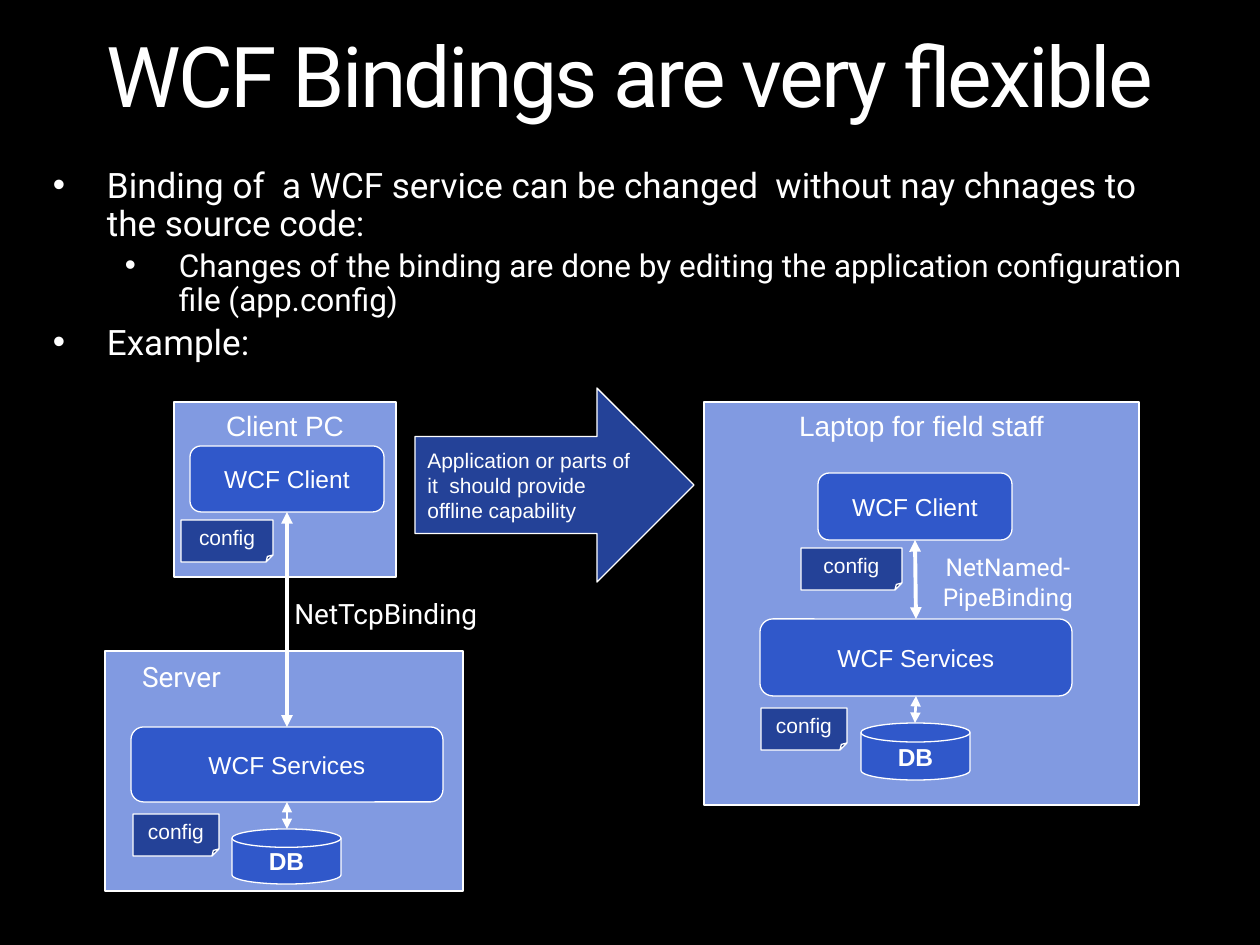
import pptx
import pptx.util
import pptx.dml.color
import pptx.enum.shapes
import pptx.enum.text
import pptx.oxml.ns
import lxml.etree

Color = pptx.dml.color.RGBColor
Pt = pptx.util.Pt
Kind = pptx.enum.shapes.MSO_SHAPE
Side = pptx.enum.text.PP_ALIGN
Hold = pptx.enum.text.MSO_ANCHOR
qn = pptx.oxml.ns.qn

BLACK = Color(0x00, 0x00, 0x00)
WHITE = Color(0xFF, 0xFF, 0xFF)
PALE = Color(0x81, 0x9A, 0xE1)
BLUE = Color(0x30, 0x58, 0xCA)
NAVY = Color(0x24, 0x42, 0x98)
SCALE = 914400 / 126


def px(*nums):
    return [round(n * SCALE) for n in nums]


def write(para, text, size, face, bold=False):
    run = para.add_run()
    run.text = text
    run.font.size = Pt(size)
    run.font.name = face
    run.font.bold = bold
    run.font.color.rgb = WHITE
    return run


deck = pptx.Presentation()
deck.slide_width, deck.slide_height = px(1260, 945)
slide = deck.slides.add_slide(deck.slide_layouts[5])
slide.background.fill.solid()
slide.background.fill.fore_color.rgb = BLACK
shapes = slide.shapes

# Title
title = shapes.title
title.left, title.top, title.width, title.height = px(0, 35, 1260, 92)
frame = title.text_frame
frame.margin_left = frame.margin_right = frame.margin_top = frame.margin_bottom = 0
frame.vertical_anchor = Hold.TOP
para = frame.paragraphs[0]
para.alignment = Side.CENTER
para.line_spacing = 0.9
run = write(para, "WCF Bindings are very flexible", 48, "Roboto")
run.font._element.set("spc", "-150")

# Bullet text
body = shapes.add_textbox(*px(53, 168, 1134, 199))
frame = body.text_frame
frame.word_wrap = True
frame.margin_left = frame.margin_right = frame.margin_top = frame.margin_bottom = 0
points = [
    (0, 54, 20, "Binding of  a WCF service can be changed  without nay chnages to the source code:"),
    (1, 126, 18, "Changes of the binding are done by editing the application configuration file (app.config)"),
    (0, 54, 20, "Example:"),
]
for i, (level, left, size, text) in enumerate(points):
    para = frame.add_paragraph() if i else frame.paragraphs[0]
    para.level = level
    para.line_spacing = 0.9
    para.space_before = Pt(size * 0.2 if i else 0)
    props = para._p.get_or_add_pPr()
    margin, indent = px(left, -54)
    props.set("marL", str(margin))
    props.set("indent", str(indent))
    lxml.etree.SubElement(props, qn("a:buFont"), typeface="Arial")
    lxml.etree.SubElement(props, qn("a:buChar"), char="•")
    write(para, text, size, "Roboto")

# Panels, boxes, notes, databases and the big arrow
styles = {
    "panel": (Kind.RECTANGLE, PALE, 16),
    "box": (Kind.ROUNDED_RECTANGLE, BLUE, 14),
    "note": (Kind.FOLDED_CORNER, NAVY, 12),
    "disk": (Kind.FLOWCHART_MAGNETIC_DISK, BLUE, 14),
    "arrow": (Kind.RIGHT_ARROW, NAVY, 12),
}
items = [
    ("pc", "panel", "Client PC", 174, 402, 222, 175),
    ("client", "box", "WCF Client", 190, 446, 194, 66),
    ("", "note", "config", 181, 520, 92, 42),
    ("server", "panel", "", 105, 651, 358, 240),
    ("service", "box", "WCF Services", 131, 727, 312, 75),
    ("", "note", "config", 133, 814, 86, 42),
    ("", "disk", "DB", 232, 829, 109, 55),
    ("laptop", "panel", "Laptop for field staff", 704, 402, 435, 403),
    ("field client", "box", "WCF Client", 818, 473, 194, 67),
    ("", "note", "config", 801, 548, 101, 42),
    ("field service", "box", "WCF Services", 760, 619, 312, 77),
    ("", "note", "config", 761, 708, 86, 42),
    ("", "disk", "DB", 861, 723, 109, 57),
    ("", "arrow", "Application or parts of it  should provide  offline capability", 415, 388, 279, 194),
]
parts = {}
for name, style, text, *area in items:
    kind, fill, size = styles[style]
    shape = shapes.add_shape(kind, *px(*area))
    shape.shadow.inherit = False
    shape.fill.solid()
    shape.fill.fore_color.rgb = fill
    shape.line.color.rgb = WHITE
    shape.line.width = Pt(0.75)
    frame = shape.text_frame
    frame.word_wrap = style not in ("note", "disk")
    frame.vertical_anchor = Hold.TOP if style == "panel" else Hold.MIDDLE
    para = frame.paragraphs[0]
    para.alignment = Side.CENTER
    if style == "arrow":
        para.alignment = Side.LEFT
        frame.margin_right = px(8)[0]
    if text:
        write(para, text, size, "Arial", style == "disk")
    parts[name] = shape

# Labels
labels = [
    ("Server", 16, Side.CENTER, True, 108, 653, 147, 47),
    ("NetTcpBinding", 16, Side.LEFT, False, 282, 590, 215, 47),
    ("NetNamed-PipeBinding", 14, Side.CENTER, True, 920, 546, 176, 72),
]
for text, size, side, wrap, *area in labels:
    frame = shapes.add_textbox(*px(*area)).text_frame
    frame.word_wrap = wrap
    para = frame.paragraphs[0]
    para.alignment = side
    write(para, text, size, "Roboto")

# Double-headed links
links = [
    ("client", "service", 2.25, 287, 512, 287, 727),
    ("service", None, 1.5, 287, 802, 287, 829),
    ("field client", "field service", 2.25, 915, 540, 916, 619),
    ("field service", None, 1.5, 916, 696, 915, 723),
]
for start, end, width, *ends in links:
    link = shapes.add_connector(pptx.enum.shapes.MSO_CONNECTOR.STRAIGHT, *px(*ends))
    link.begin_connect(parts[start], 2)
    if end:
        link.end_connect(parts[end], 0)
    link.line.color.rgb = WHITE
    link.line.width = Pt(width)
    line = link.line._get_or_add_ln()
    for tip in ("a:headEnd", "a:tailEnd"):
        lxml.etree.SubElement(line, qn(tip), type="triangle")
    lxml.etree.SubElement(link._element.spPr, qn("a:effectLst"))

deck.save("out.pptx")
